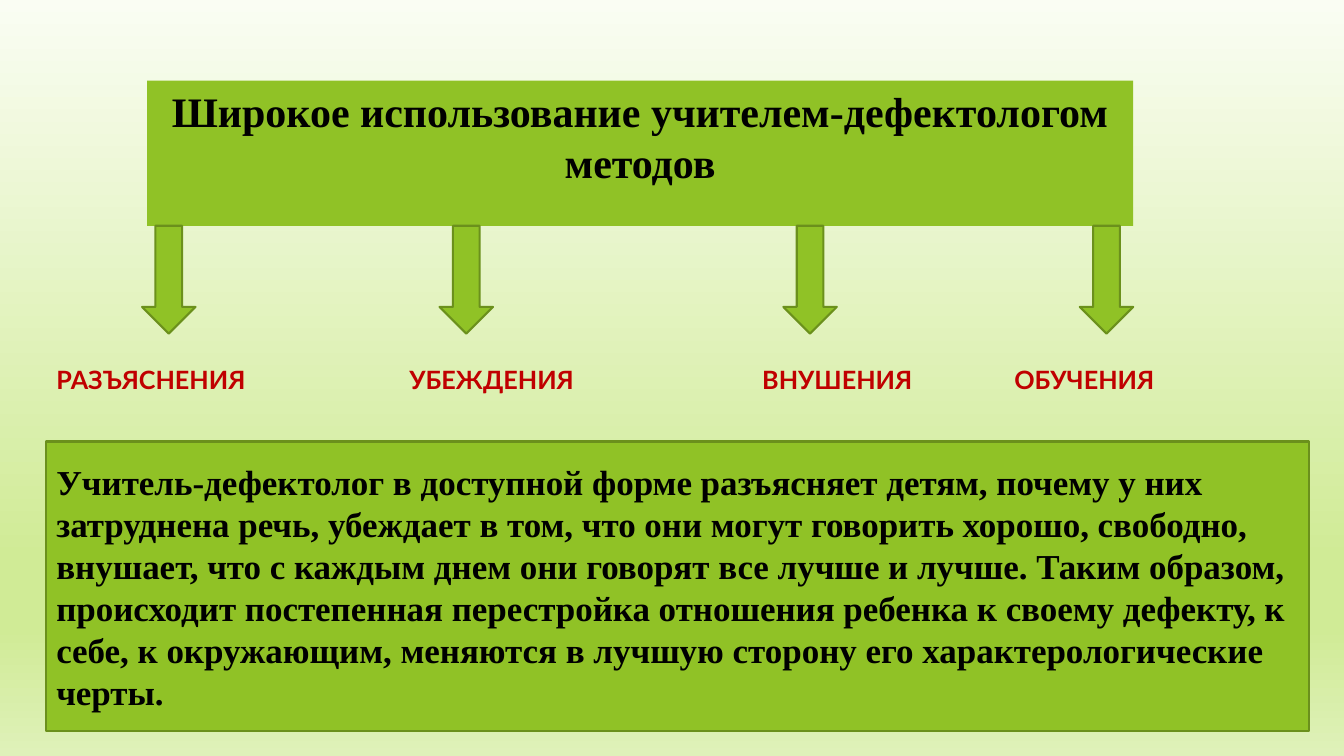
import pptx
import pptx.util
import pptx.dml.color
import pptx.enum.shapes
import pptx.enum.text
import pptx.oxml
import pptx.oxml.ns

Inches, Pt = pptx.util.Inches, pptx.util.Pt
RGB = pptx.dml.color.RGBColor
SHAPE = pptx.enum.shapes.MSO_SHAPE
ALIGN = pptx.enum.text.PP_ALIGN
ANCHOR = pptx.enum.text.MSO_ANCHOR

# Content
TITLE = "Широкое использование учителем-дефектологом методов"
# Each method with the number of half-inch tabs before it
METHODS = [("РАЗЪЯСНЕНИЯ", 0), ("УБЕЖДЕНИЯ", 4), ("ВНУШЕНИЯ", 4), ("ОБУЧЕНИЯ", 3)]
SUMMARY = (
    "Учитель-дефектолог в доступной форме разъясняет детям, почему у них "
    "затруднена речь, убеждает в том, что они могут говорить хорошо, свободно, "
    "внушает, что с каждым днем они говорят все лучше и лучше. Таким образом, "
    "происходит постепенная перестройка отношения ребенка к своему дефекту, к "
    "себе, к окружающим, меняются в лучшую сторону его характерологические черты."
)

# Colours
GREEN = RGB(0x90, 0xC2, 0x26)
DARK_GREEN = RGB(0x6B, 0x90, 0x1C)
RED = RGB(0xC0, 0x00, 0x00)
BLACK = RGB(0, 0, 0)
BACKGROUND = [(0, RGB(0xFA, 0xFD, 0xF3)), (74, RGB(0xD0, 0xEB, 0x96)),
              (83, RGB(0xD0, 0xEB, 0x96)), (100, RGB(0xDF, 0xF1, 0xB9))]

# Layout in inches: left, top, width, height
TITLE_BOX = (1.46, 0.8, 9.78, 1.44)
METHODS_BOX = (0.46, 3.56, 11.42, 0.81)
SUMMARY_BOX = (0.46, 4.38, 12.52, 2.87)
ARROW_LEFTS = [1.41, 4.36, 7.77, 10.71]
ARROW_TOP = TITLE_BOX[1] + TITLE_BOX[3]
ARROW_SIZE = (0.53, 1.07)


def xml(markup):
    ns = pptx.oxml.ns.nsdecls("a")
    return pptx.oxml.parse_xml(markup.replace(" NS", " " + ns, 1))


def place(s, box):
    s.left, s.top, s.width, s.height = map(Inches, box)


def write(s, text, name, size, color, align, anchor):
    tf = s.text_frame
    tf.word_wrap = True
    tf.auto_size = pptx.enum.text.MSO_AUTO_SIZE.NONE
    tf.vertical_anchor = anchor
    p = tf.paragraphs[0]
    p.text = text
    p.alignment = align
    p.font.name, p.font.size, p.font.bold = name, Pt(size), True
    p.font.color.rgb = color
    return p


def add_green(slide, kind, box):
    s = slide.shapes.add_shape(kind, *map(Inches, box))
    s.shadow.inherit = False
    s.fill.solid()
    s.fill.fore_color.rgb = GREEN
    s.line.color.rgb = DARK_GREEN
    s.line.width = Pt(1.5)
    return s


def main():
    prs = pptx.Presentation()
    prs.slide_width, prs.slide_height = Inches(13.33), Inches(7.5)
    slide = prs.slides.add_slide(prs.slide_layouts[1])

    # Background gradient, top to bottom
    fill = slide.background.fill
    fill.gradient()
    fill.gradient_angle = 270
    stops = fill.gradient_stops[0]._gs.getparent()
    for gs in list(stops):
        stops.remove(gs)
    for share, color in BACKGROUND:
        stops.append(xml(f'<a:gs NS pos="{share * 1000}">'
                         f'<a:srgbClr val="{color}"/></a:gs>'))

    # Title
    title, body = slide.placeholders
    place(title, TITLE_BOX)
    title.fill.solid()
    title.fill.fore_color.rgb = GREEN
    write(title, TITLE, "Times New Roman", 30, BLACK, ALIGN.CENTER, ANCHOR.TOP)

    # Methods on one line, set apart by tabs
    place(body, METHODS_BOX)
    line = "".join("\t" * tabs + method for method, tabs in METHODS)
    p = write(body, line, "Lato", 18, RED, ALIGN.LEFT, ANCHOR.TOP)
    p.space_before = Pt(10)
    pPr = p._p.get_or_add_pPr()
    pPr.set("marL", "0")
    pPr.set("indent", "0")
    pPr.find(pptx.oxml.ns.qn("a:defRPr")).addprevious(xml("<a:buNone NS/>"))

    # Arrows from the title down to the methods
    for left in ARROW_LEFTS:
        add_green(slide, SHAPE.DOWN_ARROW, (left, ARROW_TOP, *ARROW_SIZE))

    # Summary
    s = add_green(slide, SHAPE.RECTANGLE, SUMMARY_BOX)
    write(s, SUMMARY, "Times New Roman", 25, BLACK, ALIGN.LEFT, ANCHOR.MIDDLE)

    prs.save("out.pptx")


if __name__ == "__main__":
    main()
